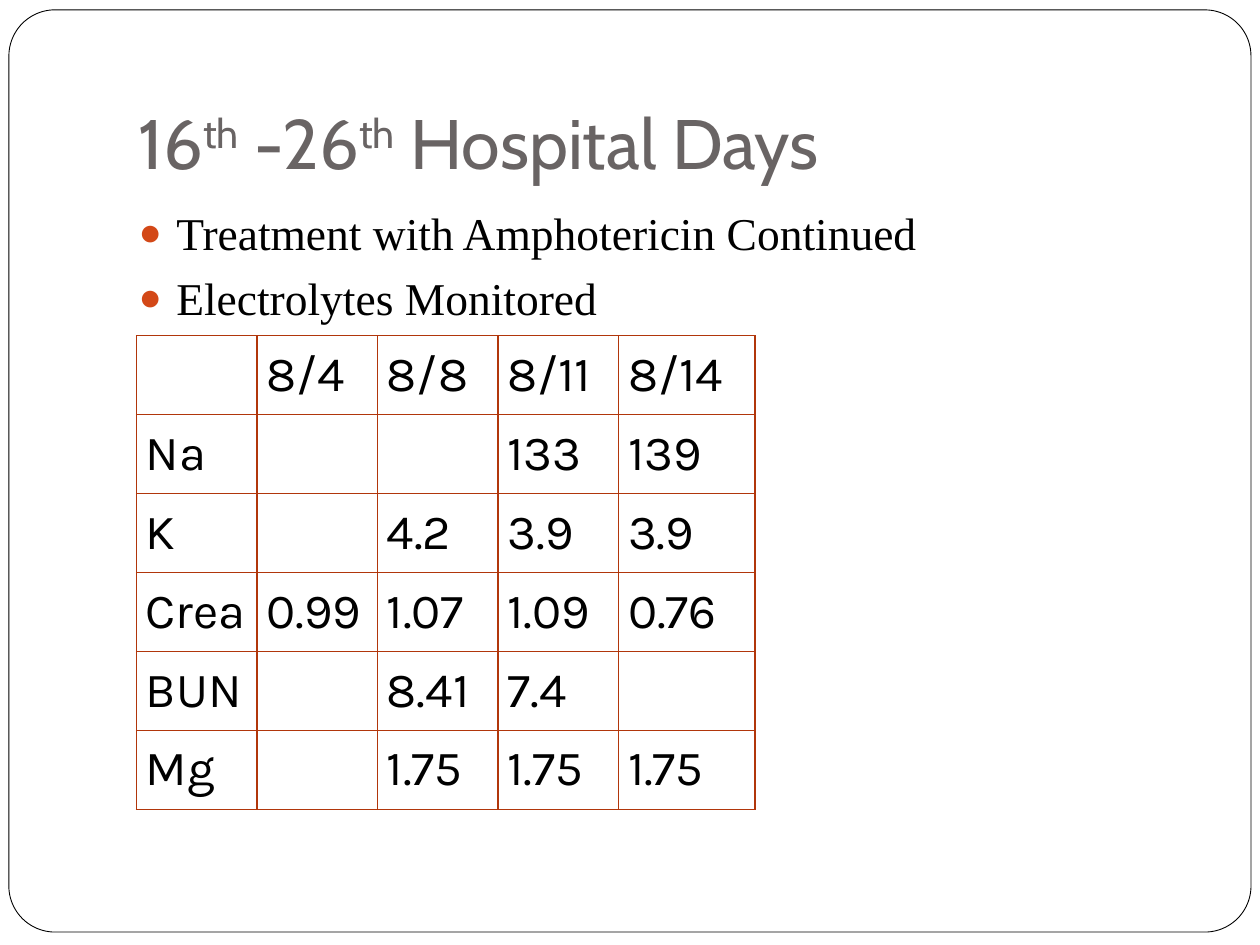
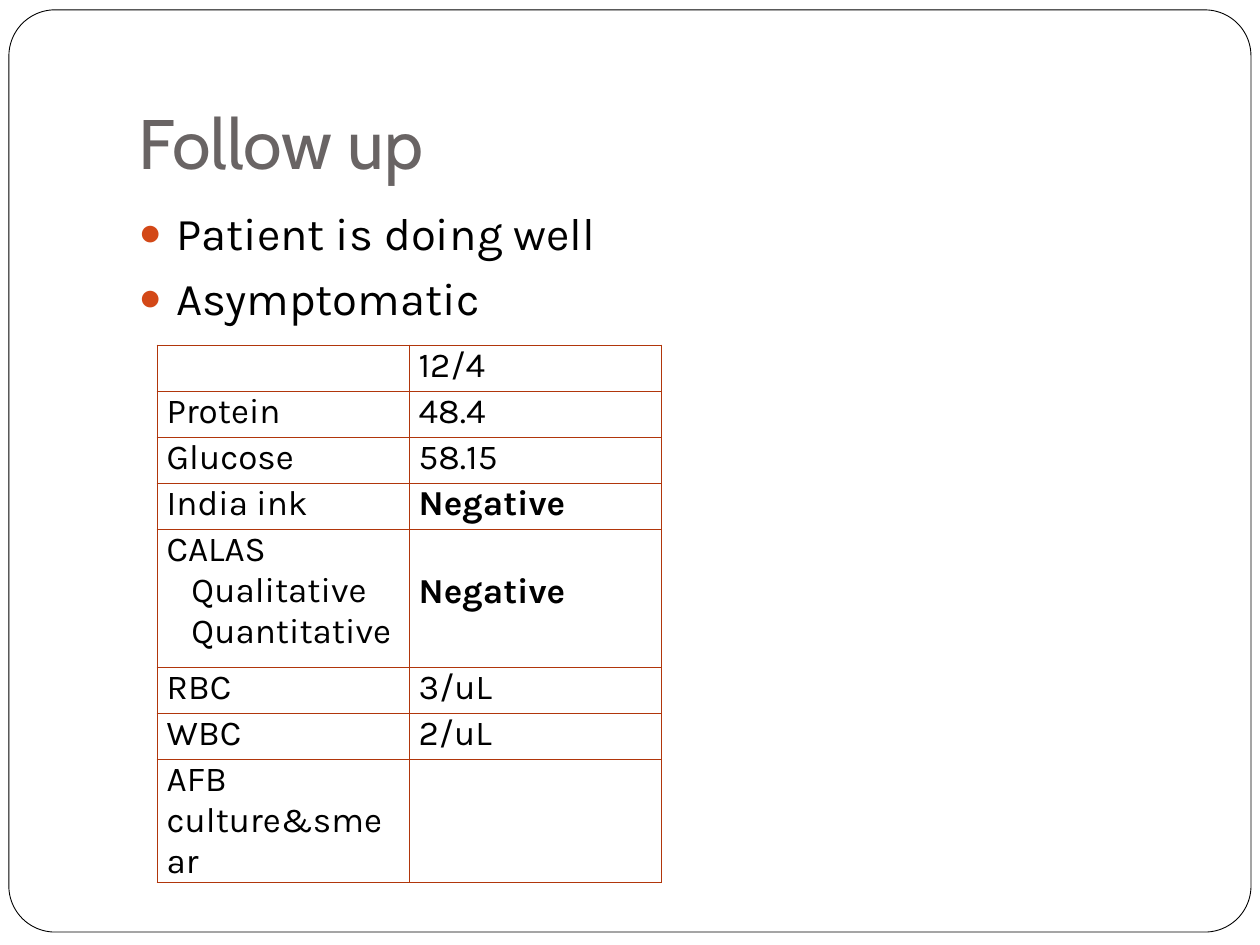
import dataclasses

import lxml.etree
import pptx
import pptx.dml.color
import pptx.enum.shapes
import pptx.enum.text
import pptx.oxml.ns
import pptx.util

Cm, Pt = pptx.util.Cm, pptx.util.Pt
Anchor = pptx.enum.text.MSO_ANCHOR


@dataclasses.dataclass(frozen=True)
class Theme:
    paper: str = "FFFFFF"
    ink: str = "000000"
    grey: str = "696464"
    dot: str = "D34817"
    rule: str = "B1360B"
    head_font: str = "Cabin"
    text_font: str = "Karla"
    serif: str = "Times New Roman"
    head_size: int = 40
    list_size: int = 26
    large: int = 28
    small: int = 20
    frame_line: float = 0.5
    rule_line: float = 0.75


THEME = Theme()


def rgb(code):
    return pptx.dml.color.RGBColor.from_string(code)


def node(parent, tag, **attrs):
    """Append a DrawingML child element, with its attributes, to parent."""
    child = lxml.etree.SubElement(parent, pptx.oxml.ns.qn("a:" + tag))
    for name, value in attrs.items():
        child.set(name, str(value))
    return child


def write(para, text, font=THEME.text_font, size=THEME.small,
          color=THEME.ink, bold=False):
    """Fill a paragraph; text between two carets is set as superscript."""
    para.alignment = pptx.enum.text.PP_ALIGN.LEFT
    for count, part in enumerate(text.split("^")):
        run = para.add_run()
        run.text = part
        run.font.name = font
        run.font.size = Pt(size)
        run.font.bold = bold
        run.font.color.rgb = rgb(color)
        if count % 2:
            run.font.element.set("baseline", "30000") if hasattr(
                run.font, "element") else run.font._rPr.set("baseline", "30000")


def lines(frame, text):
    """Yield a paragraph of the frame with each line of the text."""
    for count, line in enumerate(text.split("\n")):
        yield frame.add_paragraph() if count else frame.paragraphs[0], line


def place(shape, left, top, width, height):
    shape.left, shape.top = Cm(left), Cm(top)
    shape.width, shape.height = Cm(width), Cm(height)


def set_layout(deck):
    """Place the title and body once, for all slides."""
    layout = deck.slide_layouts[1]
    title, body = (layout.placeholders.get(idx=i) for i in (0, 1))
    place(title, 2.54, 0.76, 21.59, 3.18)
    place(body, 2.54, 4.01, 21.59, 12.7)
    for shape in (title, body):
        shape.text_frame.auto_size = pptx.enum.text.MSO_AUTO_SIZE.NONE
    title.text_frame.vertical_anchor = Anchor.BOTTOM
    title.text_frame.margin_bottom = Cm(0.25)
    return layout


def add_frame(slide):
    """Draw the rounded page frame and hand it to the slide's layout."""
    frame = slide.shapes.add_shape(
        pptx.enum.shapes.MSO_SHAPE.ROUNDED_RECTANGLE,
        Cm(0.18), Cm(0.2), Cm(25.04), Cm(18.59))
    frame.adjustments[0] = 0.05
    frame.shadow.inherit = False
    frame.fill.solid()
    frame.fill.fore_color.rgb = rgb(THEME.paper)
    frame.line.color.rgb = rgb(THEME.ink)
    frame.line.width = Pt(THEME.frame_line)
    slide.slide_layout.shapes.element.insert(2, frame.element)


def add_slide(deck, layout, title, points, font):
    slide = deck.slides.add_slide(layout)
    write(slide.shapes.title.text_frame.paragraphs[0], title,
          font=THEME.head_font, size=THEME.head_size, color=THEME.grey)
    body = slide.placeholders[1].text_frame
    for para, point in lines(body, points):
        write(para, point, font=font, size=THEME.list_size)
        add_dot(para)
    return slide


def add_dot(para):
    para.space_before = Pt(5.8)
    props = para._p.get_or_add_pPr()
    props.set("marL", str(Cm(0.76)))
    props.set("indent", str(-Cm(0.76)))
    node(node(props, "buClr"), "srgbClr", val=THEME.dot)
    node(props, "buSzPct", val=85000)
    node(props, "buChar", char="●")


def rule_cell(cell):
    """Give a cell no fill and a thin line on each side."""
    props = cell._tc.get_or_add_tcPr()
    for side in ("lnL", "lnR", "lnT", "lnB"):
        line = node(props, side, w=Pt(THEME.rule_line))
        node(node(line, "solidFill"), "srgbClr", val=THEME.rule)
    cell.fill.background()


def add_grid(slide, left, top, widths, heights, rows, size, anchor,
             strong=None):
    """Add a ruled table; lines after a cell's first one are indented."""
    grid = slide.shapes.add_table(
        len(rows), len(widths), Cm(left), Cm(top),
        Cm(sum(widths)), Cm(sum(heights))).table
    grid.first_row = grid.horz_banding = False
    for col, width in zip(grid.columns, widths):
        col.width = Cm(width)
    for row, height, texts in zip(grid.rows, heights, rows):
        row.height = Cm(height)
        for cell, text in zip(row.cells, texts):
            rule_cell(cell)
            cell.vertical_anchor = anchor
            cell.margin_left = cell.margin_right = Cm(0.19)
            cell.margin_top = cell.margin_bottom = 0
            if not text:
                continue
            for count, (para, line) in enumerate(lines(cell.text_frame, text)):
                write(para, line, size=size, bold=line == strong)
                if count:
                    para._p.get_or_add_pPr().set("marL", str(Cm(0.5)))
    return grid


def main():
    deck = pptx.Presentation()
    deck.slide_width, deck.slide_height = Cm(25.4), Cm(19.05)
    layout = set_layout(deck)

    days = add_slide(deck, layout, "16^th^ -26^th^ Hospital Days",
                     "Treatment with Amphotericin Continued\n"
                     "Electrolytes Monitored", THEME.serif)
    add_frame(days)
    salts = [
        ("", "8/4", "8/8", "8/11", "8/14"),
        ("Na", "", "", "133", "139"),
        ("K", "", "4.2", "3.9", "3.9"),
        ("Crea", "0.99", "1.07", "1.09", "0.76"),
        ("BUN", "", "8.41", "7.4", ""),
        ("Mg", "", "1.75", "1.75", "1.75"),
    ]
    add_grid(days, 2.75, 6.77, [2.43] * 4 + [2.75], [1.59] * 6, salts,
             THEME.large, Anchor.MIDDLE)

    follow = add_slide(deck, layout, "Follow up",
                       "Patient is doing well\nAsymptomatic", THEME.text_font)
    tests = [
        ("", "12/4"),
        ("Protein", "48.4"),
        ("Glucose", "58.15"),
        ("India ink", "Negative"),
        ("CALAS\nQualitative\nQuantitative", "Negative"),
        ("RBC", "3/uL"),
        ("WBC", "2/uL"),
        ("AFB culture&smear", ""),
    ]
    heights = [0.93] * 4 + [2.77] + [0.93] * 2 + [1.85]
    grid = add_grid(follow, 3.17, 6.96, [5.08] * 2, heights, tests,
                    THEME.small, Anchor.TOP, strong="Negative")
    grid.cell(4, 1).margin_top = Cm(0.83)

    deck.save("out.pptx")


if __name__ == "__main__":
    main()
